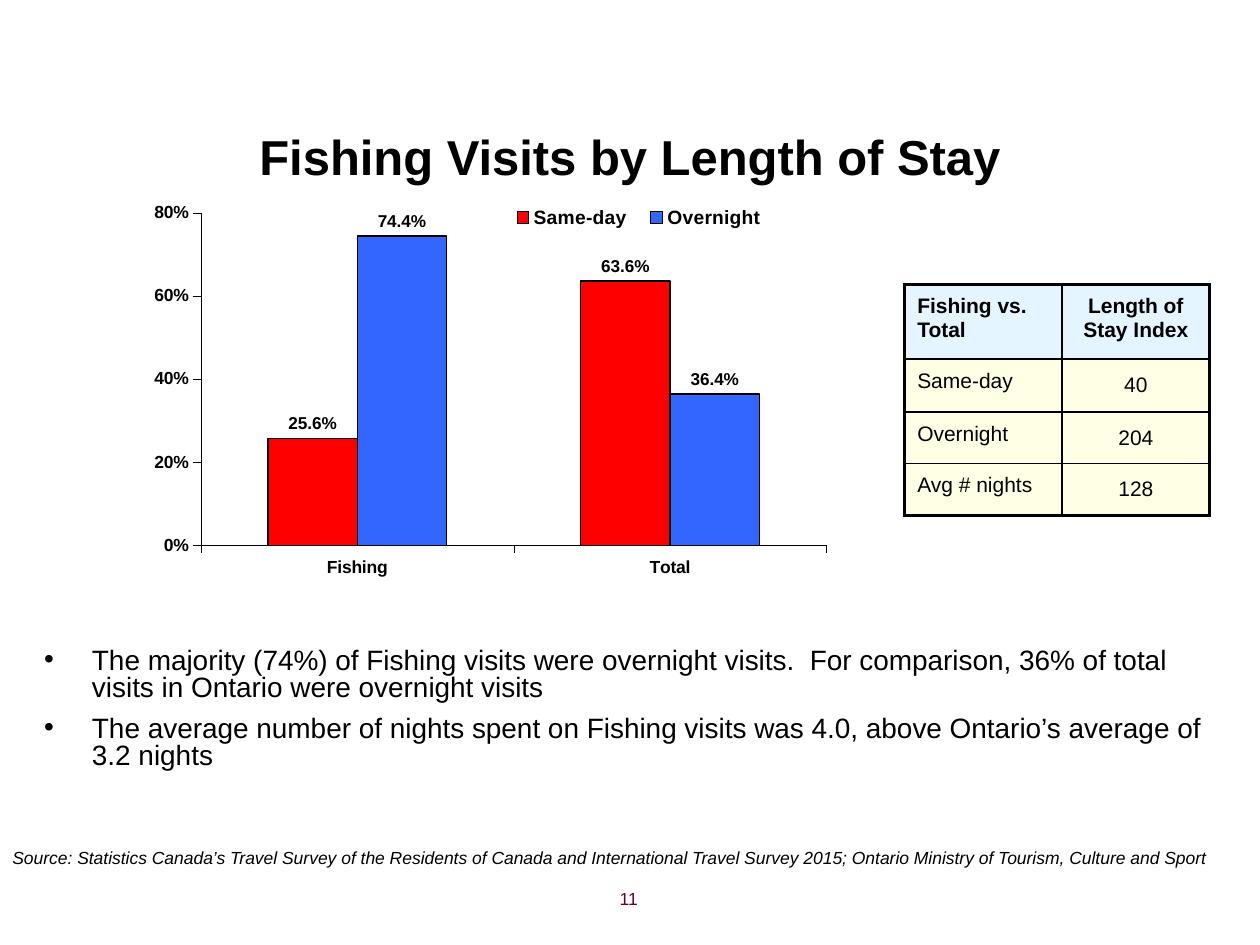
from lxml.etree import SubElement
from pptx import Presentation
from pptx.chart.data import CategoryChartData
from pptx.dml.color import RGBColor
from pptx.enum.chart import XL_CHART_TYPE as ChartType, XL_LABEL_POSITION as LabelPosition
from pptx.enum.chart import XL_LEGEND_POSITION as LegendPosition, XL_TICK_MARK as TickMark
from pptx.enum.text import MSO_ANCHOR as Anchor, MSO_AUTO_SIZE as AutoSize, PP_ALIGN as Align
from pptx.oxml import parse_xml
from pptx.oxml.ns import nsdecls, qn
from pptx.util import Inches, Pt

BLACK = "000000"
HEADER_FILL, BODY_FILL = "CCECFF", "FFFFCC"
SERIES = [("Same-day", (0.256, 0.636), "FF0000"), ("Overnight", (0.744, 0.364), "3366FF")]
INDEX_ROWS = [
    ("Fishing vs. Total", "Length of Stay Index"),
    ("Same-day", "40"),
    ("Overnight", "204"),
    ("Avg # nights", "128"),
]
FINDINGS = [
    "The majority (74%) of Fishing visits were overnight visits.  For comparison, "
    "36% of total visits in Ontario were overnight visits",
    "The average number of nights spent on Fishing visits was 4.0, above Ontario’s "
    "average of 3.2 nights",
]
SOURCE = (
    "Source: Statistics Canada’s Travel Survey of the Residents of Canada and International "
    "Travel Survey 2015; Ontario Ministry of Tourism, Culture and Sport"
)


def set_color(color_format, value):
    """Give a colour format a hex colour."""
    color_format.rgb = RGBColor.from_string(value)


def set_attributes(target, **values):
    """Set every given attribute on the target."""
    for name, value in values.items():
        setattr(target, name, value)


def set_font(font, size, color=BLACK, **values):
    """Format a font in Arial."""
    set_attributes(font, name="Arial", size=Pt(size), **values)
    set_color(font.color, color)


def set_line(line, width):
    """Draw a black line of the given width in points."""
    set_color(line.color, BLACK)
    line.width = Pt(width)


def place(shape, box):
    """Move a shape to a box given in inches."""
    left, top, width, height = map(Inches, box)
    set_attributes(shape, left=left, top=top, width=width, height=height)


def add_title(slide, box):
    """Fill the title placeholder."""
    title = slide.shapes.title
    place(title, box)
    set_attributes(title.text_frame, text="Fishing Visits by Length of Stay",
                   auto_size=AutoSize.NONE, vertical_anchor=Anchor.MIDDLE)
    paragraph = title.text_frame.paragraphs[0]
    paragraph.alignment = Align.CENTER
    set_font(paragraph.font, 28, bold=True)


def set_layout(element, position, fractions, inner=False):
    """Place a chart part at fractions of the chart area."""
    for old in element.findall(qn("c:layout")):
        element.remove(old)
    layout = parse_xml(f"<c:layout {nsdecls('c')}><c:manualLayout/></c:layout>")
    manual = layout[0]
    settings = [("layoutTarget", "inner")] if inner else []
    settings += [("xMode", "edge"), ("yMode", "edge"), *zip("xywh", fractions)]
    for name, value in settings:
        SubElement(manual, qn(f"c:{name}")).set("val", str(value))
    element.insert(position, layout)


def format_axis(axis):
    """Give an axis thin lines, outside ticks and bold labels."""
    set_attributes(axis, has_major_gridlines=False, major_tick_mark=TickMark.OUTSIDE,
                   minor_tick_mark=TickMark.NONE)
    set_line(axis.format.line, 0.19)
    set_font(axis.tick_labels.font, 10, bold=True)


def add_stay_chart(slide, box):
    """Add the column chart of visits by length of stay."""
    data = CategoryChartData(number_format="0.0%")
    data.categories = ["Fishing", "Total"]
    for name, values, _ in SERIES:
        data.add_series(name, values)
    frame = slide.shapes.add_chart(ChartType.COLUMN_CLUSTERED, *map(Inches, box), data)
    chart = frame.chart
    set_attributes(chart, has_title=False, has_legend=True)
    set_font(chart.font, 15.7, bold=True)
    set_attributes(chart.legend, position=LegendPosition.RIGHT, include_in_layout=False)
    set_font(chart.legend.font, 11, bold=True)
    set_layout(chart.element.find(".//" + qn("c:plotArea")), 0, (0.1, 0.05, 0.65, 0.7), True)
    set_layout(chart.element.find(".//" + qn("c:legend")), 1, (0.41, 0.03, 0.29, 0.06))

    format_axis(chart.category_axis)
    format_axis(chart.value_axis)
    set_attributes(chart.value_axis, minimum_scale=0, maximum_scale=0.8, major_unit=0.2)
    set_attributes(chart.value_axis.tick_labels, number_format="0%",
                   number_format_is_linked=False)

    plot = chart.plots[0]
    set_attributes(plot, gap_width=150, overlap=0, vary_by_categories=False)
    for series, (_, _, color) in zip(plot.series, SERIES):
        series.format.fill.solid()
        set_color(series.format.fill.fore_color, color)
        set_line(series.format.line, 0.75)
        labels = series.data_labels
        set_attributes(labels, show_value=True, number_format="0.0%",
                       number_format_is_linked=False, position=LabelPosition.OUTSIDE_END)
        set_font(labels.font, 9.8, bold=True)


def format_cell(cell, fill, borders):
    """Give a cell its borders and a half transparent fill."""
    properties = cell._tc.get_or_add_tcPr()
    for side, width in borders.items():
        properties.append(parse_xml(
            f'<a:ln{side} {nsdecls("a")} w="{Pt(width)}"><a:solidFill>'
            f'<a:srgbClr val="{BLACK}"/></a:solidFill></a:ln{side}>'))
    cell.fill.solid()
    set_color(cell.fill.fore_color, fill)
    color = properties.find(qn("a:solidFill")).find(qn("a:srgbClr"))
    SubElement(color, qn("a:alpha")).set("val", "50000")


def add_index_table(slide, box):
    """Add the table of length of stay indexes."""
    last_row, last_column = len(INDEX_ROWS) - 1, 1
    frame = slide.shapes.add_table(last_row + 1, last_column + 1, *map(Inches, box))
    table = frame.table
    set_attributes(table, first_row=False, horz_banding=False)
    for column, width in zip(table.columns, (1.25, 1.17)):
        column.width = Inches(width)
    for row, height in zip(table.rows, (0.59, 0.42, 0.41, 0.41)):
        row.height = Inches(height)
    for r, texts in enumerate(INDEX_ROWS):
        for c, text in enumerate(texts):
            cell = table.cell(r, c)
            cell.text = text
            edges = {"L": c == 0, "R": c == last_column, "T": r == 0, "B": r == last_row}
            borders = {side: 2.25 if outer else 1 for side, outer in edges.items()}
            format_cell(cell, BODY_FILL if r else HEADER_FILL, borders)
            paragraph = cell.text_frame.paragraphs[0]
            paragraph.alignment = Align.CENTER if c else Align.LEFT
            set_font(paragraph.font, 12, bold=r == 0)
            if r and c:
                set_attributes(cell, vertical_anchor=Anchor.MIDDLE, margin_left=0,
                               margin_right=0, margin_top=0, margin_bottom=0)
            else:
                cell.margin_top = Inches(0.08)


def add_findings(slide, box):
    """Fill the body placeholder with the bulleted findings."""
    body = slide.placeholders[1]
    place(body, box)
    set_attributes(body.text_frame, text="\n".join(FINDINGS), auto_size=AutoSize.NONE)
    for number, paragraph in enumerate(body.text_frame.paragraphs):
        properties = paragraph._p.get_or_add_pPr()
        properties.set("marL", str(Inches(0.38)))
        properties.set("indent", str(Inches(-0.38)))
        SubElement(properties, qn("a:buChar")).set("char", "•")
        set_attributes(paragraph, line_spacing=0.8, space_before=Pt(8 if number else 0))
        set_font(paragraph.font, 16)


def add_note(slide, box, text, color=BLACK, alignment=Align.LEFT, italic=False):
    """Add a small line of text."""
    frame = slide.shapes.add_textbox(*map(Inches, box)).text_frame
    set_attributes(frame, text=text, word_wrap=True)
    frame.paragraphs[0].alignment = alignment
    set_font(frame.paragraphs[0].font, 10, color, italic=italic)


def main():
    """Build the slide and save it."""
    presentation = Presentation()
    set_attributes(presentation, slide_width=Inches(10), slide_height=Inches(7.5))
    slide = presentation.slides.add_slide(presentation.slide_layouts[1])
    add_title(slide, (0.5, 0.86, 9, 0.75))
    add_index_table(slide, (7.18, 2.26, 2.42, 1.83))
    add_findings(slide, (0.25, 5.1, 9.5, 1.67))
    add_note(slide, (2.83, 7, 2.33, 0.35), "11", "660033", Align.RIGHT)
    add_stay_chart(slide, (0.83, 1.5, 7.64, 3.77))
    add_note(slide, (0, 6.67, 9.8, 0.27), SOURCE, italic=True)
    presentation.save("out.pptx")


if __name__ == "__main__":
    main()
